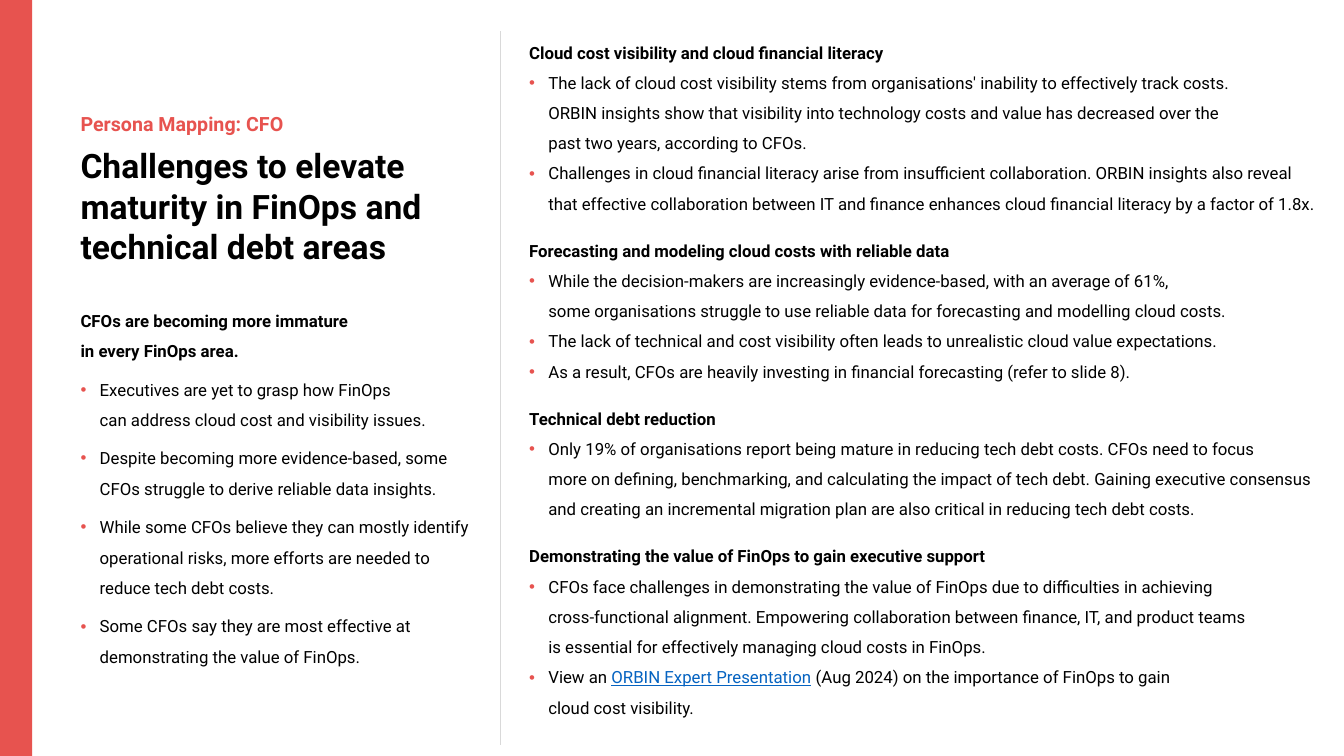
"""Build the slide on the CFO's challenges in FinOps and technical debt."""
import copy

import pptx
import pptx.dml.color
import pptx.enum.shapes
import pptx.enum.text
import pptx.oxml
import pptx.oxml.ns
import pptx.util

RGB = pptx.dml.color.RGBColor
CORAL = RGB(0xE7, 0x53, 0x4F)
BLACK = RGB(0, 0, 0)
GREY = RGB(0xD9, 0xD9, 0xD9)
BLUE = RGB(0x05, 0x63, 0xC1)
FONT = "Roboto"

KICKER = "Persona Mapping: CFO"
TITLE = "Challenges to elevate maturity in FinOps and technical debt areas"
SUMMARY = [
    ("CFOs are becoming more immature \nin every FinOps area.", [
        "Executives are yet to grasp how FinOps \ncan address cloud cost and visibility issues.",
        "Despite becoming more evidence-based, some CFOs struggle to derive reliable data insights.",
        "While some CFOs believe they can mostly identify operational risks, "
        "more efforts are needed to reduce tech debt costs.",
        "Some CFOs say they are most effective at demonstrating the value of FinOps.",
    ]),
]
CHALLENGES = [
    ("Cloud cost visibility and cloud financial literacy", [
        "The lack of cloud cost visibility stems from organisations' inability to effectively "
        "track costs. \nORBIN insights show that visibility into technology costs and value "
        "has decreased over the \npast two years, according to CFOs.",
        "Challenges in cloud financial literacy arise from insufficient collaboration. "
        "ORBIN insights also reveal that effective collaboration between IT and finance "
        "enhances cloud financial literacy by a factor of 1.8x.",
    ]),
    ("Forecasting and modeling cloud costs with reliable data", [
        "While the decision-makers are increasingly evidence-based, with an average of 61%, \n"
        "some organisations struggle to use reliable data for forecasting and modelling cloud costs.",
        "The lack of technical and cost visibility often leads to unrealistic cloud value expectations.",
        "As a result, CFOs are heavily investing in financial forecasting (refer to slide 8).",
    ]),
    ("Technical debt reduction", [
        "Only 19% of organisations report being mature in reducing tech debt costs. "
        "CFOs need to focus \nmore on defining, benchmarking, and calculating the impact of "
        "tech debt. Gaining executive consensus and creating an incremental migration plan "
        "are also critical in reducing tech debt costs.",
    ]),
    ("Demonstrating the value of FinOps to gain executive support", [
        "CFOs face challenges in demonstrating the value of FinOps due to difficulties in "
        "achieving \ncross-functional alignment. Empowering collaboration between finance, IT, "
        "and product teams \nis essential for effectively managing cloud costs in FinOps.",
        ("View an ", "ORBIN Expert Presentation",
         " (Aug 2024) on the importance of FinOps to gain \ncloud cost visibility."),
    ]),
]

COLS, ROWS = 1333, 750
LEFT, RULE, RIGHT = 70, 496, 515

prs = pptx.Presentation()
prs.slide_width = pptx.util.Inches(13.33)
prs.slide_height = pptx.util.Inches(7.5)
s = prs.slides.add_slide(prs.slide_layouts[6])


def cells(col, row, *more):
    units = (prs.slide_width / COLS, prs.slide_height / ROWS)
    return [round(n * units[i % 2]) for i, n in enumerate((col, row, *more))]


def text_box(col, row, width, height):
    tf = s.shapes.add_textbox(*cells(col, row, width, height)).text_frame
    tf.word_wrap = True
    tf.auto_size = pptx.enum.text.MSO_AUTO_SIZE.SHAPE_TO_FIT_TEXT
    return tf


def write(p, content, size, color, bold):
    pieces = (content,) if isinstance(content, str) else content
    for i, piece in enumerate(pieces):
        for j, line in enumerate(piece.split("\n")):
            if j:
                p.add_line_break()
            r = p.add_run()
            r.text = line
            r.font.size = pptx.util.Pt(size)
            r.font.name = FONT
            r.font.bold = bold
            r.font.color.rgb = BLUE if i == 1 else color
            r.font.underline = i == 1
    for br in p._p.findall(pptx.oxml.ns.qn("a:br")):
        br.insert(0, copy.deepcopy(p.runs[-1]._r.rPr))


def add_bullet(p):
    pPr = p._p.get_or_add_pPr()
    indent = pptx.util.Inches(0.19)
    pPr.set("marL", str(indent))
    pPr.set("indent", str(-indent))
    ns = pptx.oxml.ns.nsdecls("a")
    for xml in (f'<a:buClr {ns}><a:srgbClr val="{CORAL}"/></a:buClr>',
                f'<a:buFont {ns} typeface="Arial"/>',
                f'<a:buChar {ns} char="•"/>'):
        pPr.append(pptx.oxml.parse_xml(xml))


def write_sections(tf, sections, gap, section_gap):
    p = tf.paragraphs[0]
    for heading, bullets in sections:
        for i, content in enumerate([heading, *bullets]):
            if p is None:
                p = tf.add_paragraph()
            p.line_spacing = 1.5
            p.space_after = pptx.util.Pt(section_gap if i == len(bullets) else gap)
            if i:
                add_bullet(p)
            write(p, content, 12, BLACK, i == 0)
            p = None


band = s.shapes.add_shape(pptx.enum.shapes.MSO_SHAPE.RECTANGLE, *cells(0, 0, 32, ROWS))
band.shadow.inherit = False
band.fill.solid()
band.fill.fore_color.rgb = CORAL
band.line.fill.background()

write_sections(text_box(LEFT, 293, 412, 373), SUMMARY, 6, 6)
write(text_box(LEFT, 139, 412, 131).paragraphs[0], TITLE, 24, BLACK, True)
write(text_box(LEFT, 106, 452, 34).paragraphs[0], KICKER, 14, CORAL, True)

rule = s.shapes.add_connector(pptx.enum.shapes.MSO_CONNECTOR.STRAIGHT,
                              *cells(RULE, 739, RULE, 31))
rule.line.color.rgb = GREY
rule.line.width = pptx.util.Pt(0.5)
rule._element.spPr.append(
    pptx.oxml.parse_xml(f'<a:effectLst {pptx.oxml.ns.nsdecls("a")}/>'))

write_sections(text_box(RIGHT, 27, 809, 693), CHALLENGES, 0, 12)

prs.save("out.pptx")
